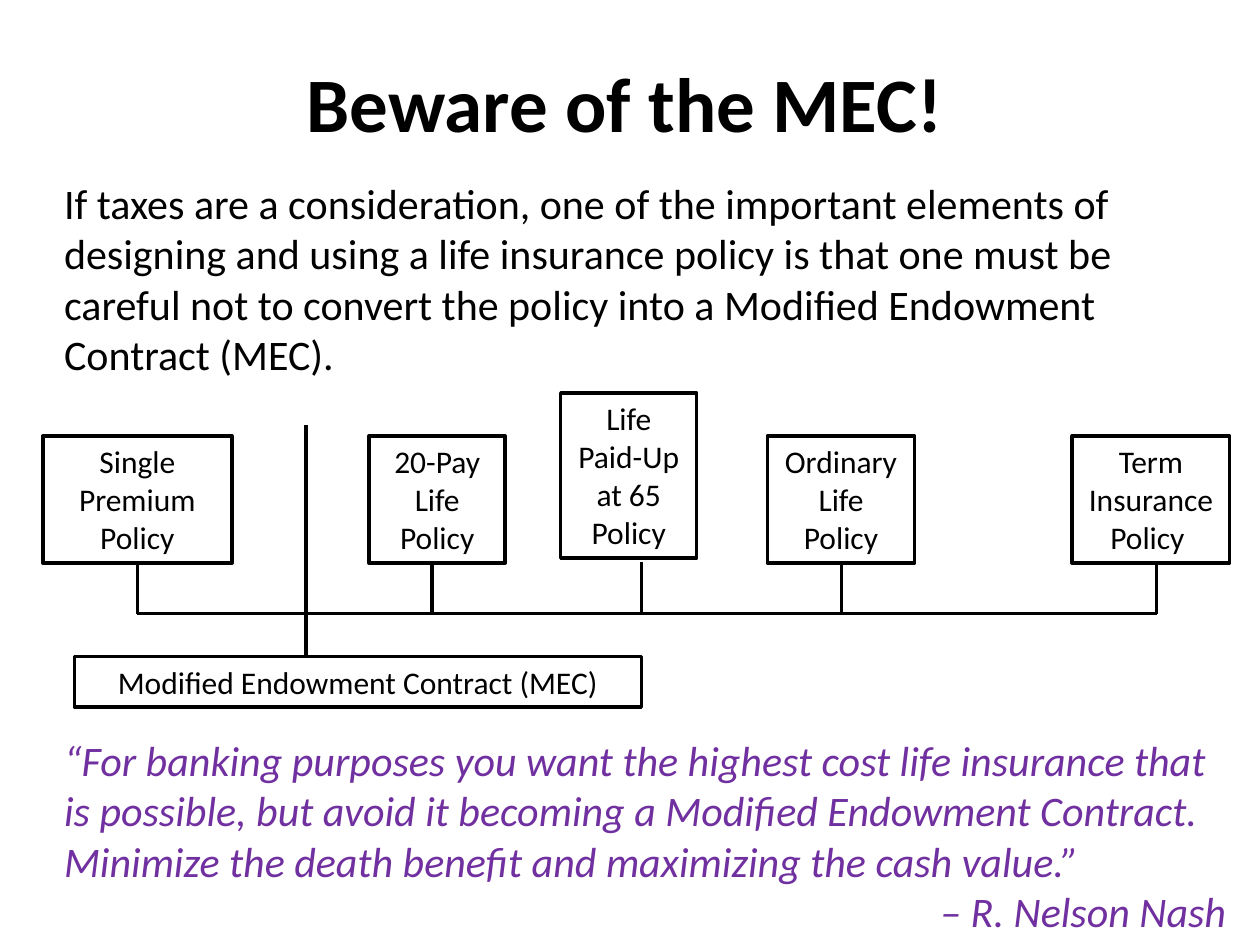
from pptx import Presentation
from pptx.dml.color import RGBColor
from pptx.enum.shapes import MSO_CONNECTOR, MSO_SHAPE
from pptx.enum.text import MSO_ANCHOR, PP_ALIGN
from pptx.oxml.ns import qn
from pptx.util import Inches, Pt
from lxml.etree import SubElement

BLACK = RGBColor(0x00, 0x00, 0x00)
WHITE = RGBColor(0xFF, 0xFF, 0xFF)
PURPLE = RGBColor(0x70, 0x30, 0xA0)
FONT = "Calibri"
CELL = 0.1
LINE_WIDTH = Pt(2)

BOX_ROW, BOX_ROWS = 3.4, 10.1
STEM_ROW, AXIS_ROW = 13.4, 17.5
POLICIES = [
    ("Single Premium Policy", 0, 15, BOX_ROW, BOX_ROWS, 7.5),
    ("20-Pay Life Policy", 25.9, 10.8, BOX_ROW, BOX_ROWS, 30.9),
    ("Life Paid-Up at 65 Policy", 41.1, 10.8, 0, 13.1, 47.5),
    ("Ordinary Life Policy", 57.5, 11.7, BOX_ROW, BOX_ROWS, 63.4),
    ("Term Insurance Policy ", 81.7, 12.5, BOX_ROW, BOX_ROWS, 88.4),
]


def grid(*cells):
    return [Inches(cell * CELL) for cell in cells]


def write(paragraph, text, size, align, color=BLACK, bold=False, italic=False):
    paragraph.alignment = align
    run = paragraph.add_run()
    run.text = text
    font = run.font
    font.name, font.size = FONT, Pt(size)
    font.bold, font.italic = bold, italic
    font.color.rgb = color


def add_text(slide, box, lines, size, anchor=MSO_ANCHOR.TOP, **style):
    frame = slide.shapes.add_textbox(*grid(*box)).text_frame
    frame.word_wrap = True
    frame.vertical_anchor = anchor
    for index, (text, align) in enumerate(lines):
        paragraph = frame.add_paragraph() if index else frame.paragraphs[0]
        write(paragraph, text, size, align, **style)


def add_label(slide, box, text):
    shape = slide.shapes.add_shape(MSO_SHAPE.RECTANGLE, *grid(*box))
    shape.shadow.inherit = False
    shape.fill.solid()
    shape.fill.fore_color.rgb = WHITE
    shape.line.color.rgb = BLACK
    shape.line.width = LINE_WIDTH
    frame = shape.text_frame
    frame.word_wrap = True
    frame.vertical_anchor = MSO_ANCHOR.TOP
    write(frame.paragraphs[0], text, 18, PP_ALIGN.CENTER)


def add_line(slide, *ends):
    line = slide.shapes.add_connector(MSO_CONNECTOR.STRAIGHT, *grid(*ends))
    line.line.color.rgb = BLACK
    line.line.width = LINE_WIDTH
    SubElement(line._element.spPr, qn("a:effectLst"))


def add_title(slide, box):
    lines = [("Beware of the MEC!", PP_ALIGN.CENTER)]
    add_text(slide, box, lines, 44, MSO_ANCHOR.MIDDLE, bold=True)


def add_introduction(slide, box):
    text = (
        "If taxes are a consideration, one of the important elements of "
        "designing and using a life insurance policy is that one must be "
        "careful not to convert the policy into a Modified Endowment "
        "Contract (MEC)."
    )
    add_text(slide, box, [(text, PP_ALIGN.LEFT)], 24)


def add_policy_scale(slide, box):
    left, top, width, height = box
    add_label(slide, (left + 2.5, top + height - 4, 45, 4),
              "Modified Endowment Contract (MEC)")
    axis = top + AXIS_ROW
    for text, column, columns, row, rows, stem in POLICIES:
        add_label(slide, (left + column, top + row, columns, rows), text)
        add_line(slide, left + stem, axis, left + stem, top + STEM_ROW)
    first, last = POLICIES[0][-1], POLICIES[-1][-1]
    add_line(slide, left + first, axis, left + last, axis)
    divider = left + 20.9
    add_line(slide, divider, top + height - 4, divider, top + 2.5)


def add_quotation(slide, box):
    quotation = (
        "“For banking purposes you want the highest cost life insurance that "
        "is possible, but avoid it becoming a Modified Endowment Contract. "
        "Minimize the death benefit and maximizing the cash value.”"
    )
    lines = [(quotation, PP_ALIGN.LEFT), ("– R. Nelson Nash", PP_ALIGN.RIGHT)]
    add_text(slide, box, lines, 24, color=PURPLE, italic=True)


def main():
    presentation = Presentation()
    presentation.slide_width, presentation.slide_height = grid(100, 75)
    slide = presentation.slides.add_slide(presentation.slide_layouts[6])
    add_title(slide, (1.7, 1.8, 95.8, 12.5))
    add_policy_scale(slide, (3.4, 31.2, 94.2, 24.9))
    add_introduction(slide, (4.1, 13.6, 92.5, 17.2))
    add_quotation(slide, (4.1, 57.8, 94.2, 17.2))
    presentation.save("out.pptx")


if __name__ == "__main__":
    main()
